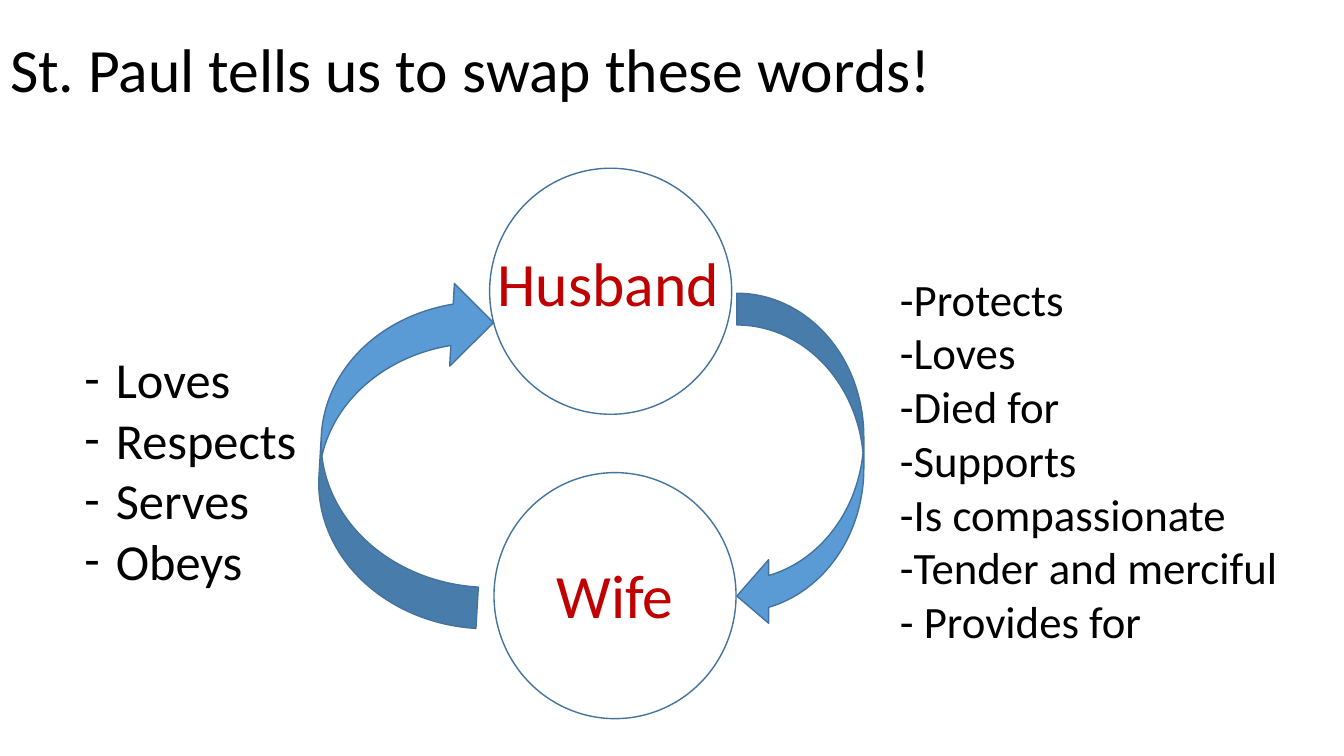
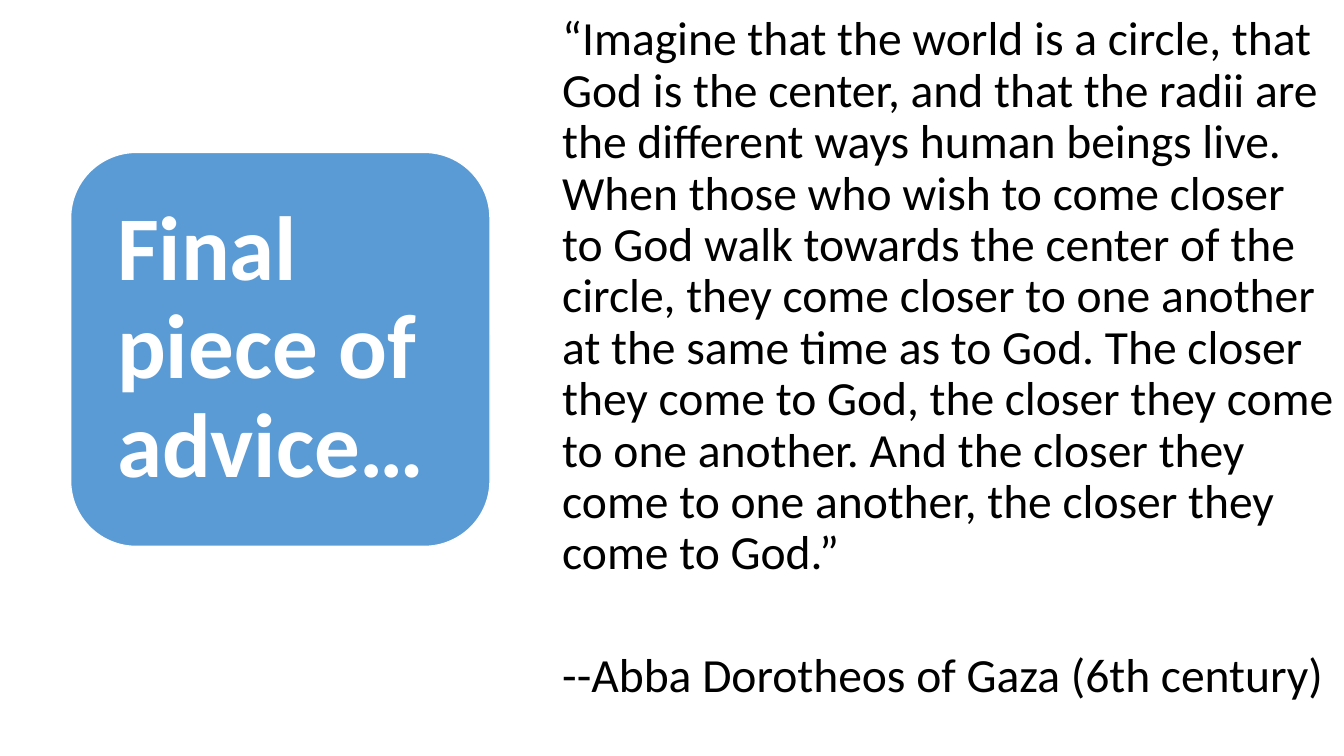
from lxml.etree import SubElement
from pptx import Presentation
from pptx.dml.color import RGBColor
from pptx.enum.shapes import MSO_SHAPE
from pptx.enum.text import MSO_ANCHOR, MSO_AUTO_SIZE, PP_ALIGN
from pptx.oxml.ns import qn
from pptx.util import Cm, Pt

COLOURS = {
    "text": "000000",
    "spouse": "C00000",
    "accent": "5B9BD5",
    "outline": "43739E",
    "white": "FFFFFF",
}
FONT = "Calibri"
TITLE_ONLY, BLANK = 5, 6


def rgb(name):
    return RGBColor.from_string(COLOURS[name])


class Deck:
    def __init__(self):
        self.presentation = Presentation()
        self.presentation.slide_width = Cm(33.87)
        self.presentation.slide_height = Cm(19.05)
        self.slide = None

    def add_slide(self, layout):
        layouts = self.presentation.slide_layouts
        self.slide = self.presentation.slides.add_slide(layouts[layout])

    def fill_text(self, frame, lines, size, colour="text", bold=False,
                  align=PP_ALIGN.LEFT, spacing=None):
        frame.word_wrap = True
        frame.auto_size = MSO_AUTO_SIZE.NONE
        frame.text = "\n".join(lines)
        for paragraph in frame.paragraphs:
            paragraph.alignment = align
            paragraph.line_spacing = spacing
            paragraph.font.name = FONT
            paragraph.font.size = Pt(size)
            paragraph.font.bold = bold
            paragraph.font.color.rgb = rgb(colour)

    def title(self, text):
        heading = self.slide.shapes.title
        heading.left, heading.top = Cm(0), Cm(0)
        heading.width, heading.height = Cm(31.55), Cm(3.68)
        heading.text_frame.vertical_anchor = MSO_ANCHOR.MIDDLE
        self.fill_text(heading.text_frame, [text], 44, spacing=0.9)

    def text(self, box, lines, size, **style):
        frame = self.slide.shapes.add_textbox(*map(Cm, box)).text_frame
        self.fill_text(frame, lines, size, **style)
        return frame

    def dashed_list(self, box, lines, size):
        for paragraph in self.text(box, lines, size).paragraphs:
            properties = paragraph._p.get_or_add_pPr()
            properties.set("marL", str(Cm(0.79)))
            properties.set("indent", str(-Cm(0.79)))
            bullet_font = SubElement(properties, qn("a:buFont"))
            bullet_font.set("typeface", FONT)
            SubElement(properties, qn("a:buChar")).set("char", "-")
            properties.append(properties.find(qn("a:defRPr")))

    def shape(self, kind, box, fill=None, line="outline", rotation=0):
        shape = self.slide.shapes.add_shape(kind, *map(Cm, box))
        shape.shadow.inherit = False
        shape.rotation = rotation
        if fill:
            shape.fill.solid()
            shape.fill.fore_color.rgb = rgb(fill)
        else:
            shape.fill.background()
        shape.line.color.rgb = rgb(line)
        shape.line.width = Pt(1)
        return shape

    def spouse(self, name, circle_at, label_box, align=PP_ALIGN.LEFT):
        self.shape(MSO_SHAPE.OVAL, (*circle_at, 6.1, 6.2))
        self.text(label_box, [name], 44, colour="spouse", align=align)

    def arrow(self, box, rotation=0):
        self.shape(MSO_SHAPE.CURVED_LEFT_ARROW, box, "accent",
                   rotation=rotation)

    def panel(self, box, text):
        panel = self.shape(MSO_SHAPE.ROUNDED_RECTANGLE, box, "accent", "white")
        frame = panel.text_frame
        frame.vertical_anchor = MSO_ANCHOR.MIDDLE
        frame.margin_left = frame.margin_right = Cm(0.69)
        frame.margin_top = frame.margin_bottom = Cm(0.69)
        self.fill_text(frame, [text], 65, "white", bold=True, spacing=0.9)


def swap_slide(deck):
    deck.add_slide(TITLE_ONLY)
    deck.title("St. Paul tells us to swap these words!")
    deck.spouse("Husband", (12.34, 4.24), (12.29, 6.05, 6.2, 2.13))
    deck.spouse("Wife", (12.45, 11.91), (12.95, 13.92, 5.11, 2.13),
                PP_ALIGN.CENTER)
    deck.arrow((18.57, 7.39, 3.2, 8.43))
    deck.arrow((8.08, 6.96, 4.17, 8.76), rotation=183.3)
    deck.text((22.43, 6.71, 10.08, 9.83), [
        "-Protects", "-Loves", "-Died for", "-Supports",
        "-Is compassionate", "-Tender and merciful", "- Provides for",
    ], 32)
    deck.dashed_list((1.88, 8.66, 6.5, 7.19),
                     ["Loves", "Respects", "Serves", "Obeys"], 36)


def advice_slide(deck):
    deck.add_slide(BLANK)
    quote = deck.text((13.92, 0.25, 19.97, 18.8), [
        "“Imagine that the world is a circle, that God is the center, and "
        "that the radii are the different ways human beings live. When those "
        "who wish to come closer to God walk towards the center of the "
        "circle, they come closer to one another at the same time as to God. "
        "The closer they come to God, the closer they come to one another. "
        "And the closer they come to one another, the closer they come to "
        "God.”",
        "--Abba Dorotheos of Gaza (6th century)",
    ], 34, spacing=0.9)
    quote.paragraphs[1].space_before = Pt(51)
    deck.panel((1.78, 3.84, 10.57, 9.93), "Final piece of advice…")


def main():
    deck = Deck()
    swap_slide(deck)
    advice_slide(deck)
    deck.presentation.save("out.pptx")


if __name__ == "__main__":
    main()
